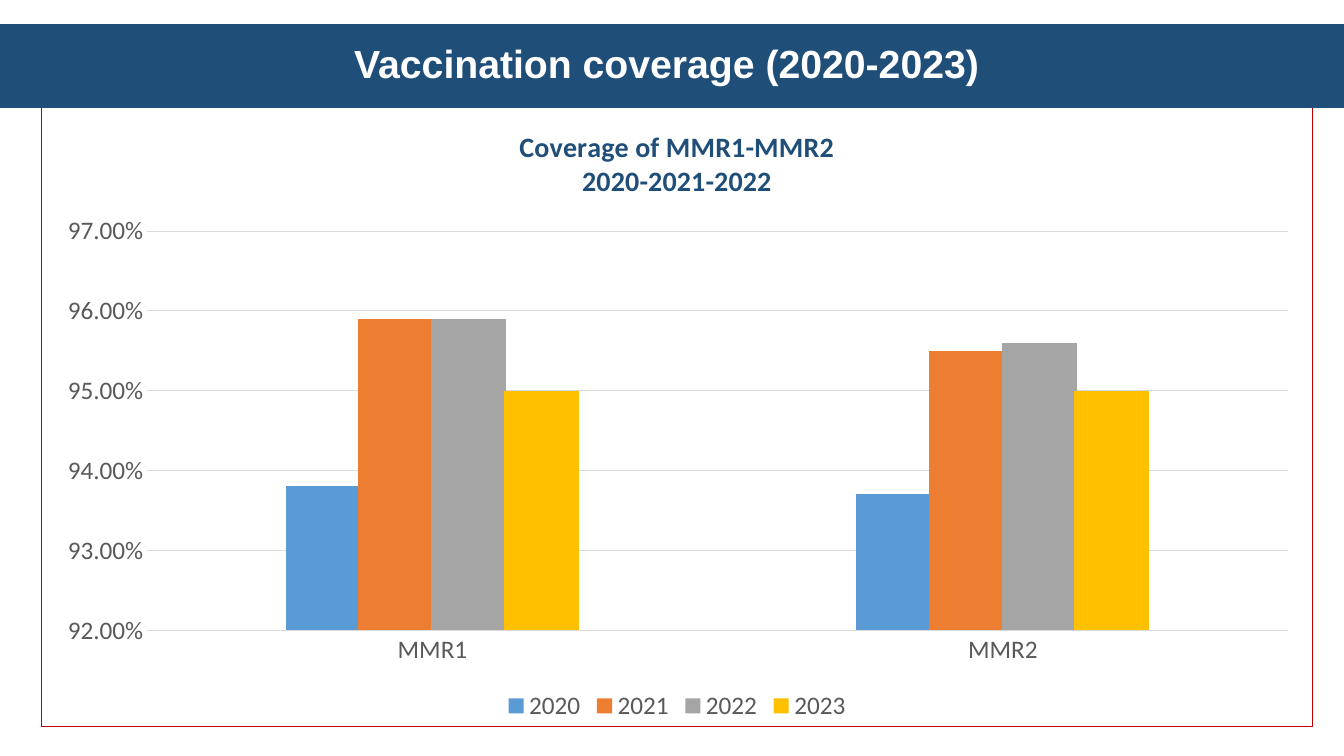
from pptx import Presentation, util as u
from pptx.chart.data import CategoryChartData
from pptx.dml.color import RGBColor
from pptx.enum import chart as charts, text
from pptx.oxml import parse_xml
from pptx.oxml.ns import nsdecls, qn

THEME = {
    "navy": RGBColor.from_string("1F4E79"),
    "white": RGBColor.from_string("FFFFFF"),
    "grey": RGBColor.from_string("595959"),
    "rule": RGBColor.from_string("D9D9D9"),
    "border": "C00000",
    "series": ["5B9BD5", "ED7D31", "A5A5A5", "FFC000"],
    "heading_font": "Arial",
    "chart_font": "Calibri",
    "heading_size": u.Pt(28),
    "chart_title_size": u.Pt(20),
    "label_size": u.Pt(18),
    "line": u.Pt(0.75),
}
COVERAGE = {
    "2020": (0.938, 0.937),
    "2021": (0.959, 0.955),
    "2022": (0.959, 0.956),
    "2023": (0.95, 0.95),
}


def style_font(font, name, size, color, bold=False):
    font.name, font.size, font.bold = name, size, bold
    font.color.rgb = color


presentation = Presentation()
presentation.slide_width = u.Inches(13.33)
presentation.slide_height = u.Inches(7.5)
slide = presentation.slides.add_slide(presentation.slide_layouts[5])

# Chart data and frame
data = CategoryChartData(number_format="0.00%")
data.categories = ["MMR1", "MMR2"]
for year, shares in COVERAGE.items():
    data.add_series(year, shares)
frame = slide.shapes.add_chart(
    charts.XL_CHART_TYPE.COLUMN_CLUSTERED,
    u.Inches(0.41), u.Inches(1.06), u.Inches(12.61), u.Inches(6.15), data)
chart = frame.chart
style_font(chart.font, THEME["chart_font"], THEME["label_size"], THEME["grey"])

# Chart title
chart.has_title = True
chart_title = chart.chart_title
chart_title.include_in_layout = False
chart_title.text_frame.text = "Coverage of MMR1-MMR2\n2020-2021-2022"
for paragraph in chart_title.text_frame.paragraphs:
    style_font(paragraph.font, THEME["chart_font"], THEME["chart_title_size"],
               THEME["navy"], True)

# Columns
plot = chart.plots[0]
plot.gap_width, plot.overlap = 369, 3
plot.vary_by_categories = False
for series, color in zip(plot.series, THEME["series"]):
    series.format.fill.solid()
    series.format.fill.fore_color.rgb = RGBColor.from_string(color)
    series.invert_if_negative = False

# Axes and gridlines
values, categories = chart.value_axis, chart.category_axis
for axis in (values, categories):
    axis.major_tick_mark = axis.minor_tick_mark = charts.XL_TICK_MARK.NONE
    style_font(axis.tick_labels.font, THEME["chart_font"], THEME["label_size"], THEME["grey"])
values.minimum_scale, values.maximum_scale, values.major_unit = 0.92, 0.97, 0.01
values.tick_labels.number_format = "0.00%"
values.tick_labels.number_format_is_linked = False
values.format.line.fill.background()
for line in (values.major_gridlines.format.line, categories.format.line):
    line.color.rgb = THEME["rule"]
    line.width = THEME["line"]

# Legend
chart.has_legend = True
chart.legend.position = charts.XL_LEGEND_POSITION.BOTTOM
chart.legend.include_in_layout = False
style_font(chart.legend.font, THEME["chart_font"], THEME["label_size"], THEME["grey"])

# Plot position, as shares of the chart, and chart border
chart_part = chart.element.find(qn("c:chart"))
plot_area = chart_part.find(qn("c:plotArea"))
for layout in plot_area.findall(qn("c:layout")):
    plot_area.remove(layout)
plot_area.insert(0, parse_xml(
    f'<c:layout {nsdecls("c")}><c:manualLayout><c:layoutTarget val="inner"/>'
    '<c:xMode val="edge"/><c:yMode val="edge"/><c:x val="0.083"/><c:y val="0.2"/>'
    '<c:w val="0.898"/><c:h val="0.645"/></c:manualLayout></c:layout>'))
chart_part.addnext(parse_xml(
    f'<c:spPr {nsdecls("c", "a")}><a:noFill/><a:ln w="{int(THEME["line"])}"><a:solidFill>'
    f'<a:srgbClr val="{THEME["border"]}"/></a:solidFill></a:ln></c:spPr>'))

# Title band, in front of the chart
title = slide.shapes.title
title.left, title.top = 0, u.Inches(0.24)
title.width, title.height = presentation.slide_width, u.Inches(0.83)
title.fill.solid()
title.fill.fore_color.rgb = THEME["navy"]
title.text_frame.text = "Vaccination coverage (2020-2023) "
title.text_frame.vertical_anchor = text.MSO_ANCHOR.MIDDLE
title.text_frame.auto_size = text.MSO_AUTO_SIZE.NONE
paragraph = title.text_frame.paragraphs[0]
paragraph.alignment = text.PP_ALIGN.CENTER
paragraph.line_spacing = 0.9
style_font(paragraph.font, THEME["heading_font"], THEME["heading_size"], THEME["white"], True)
frame.element.addnext(title.element)

presentation.save("out.pptx")
